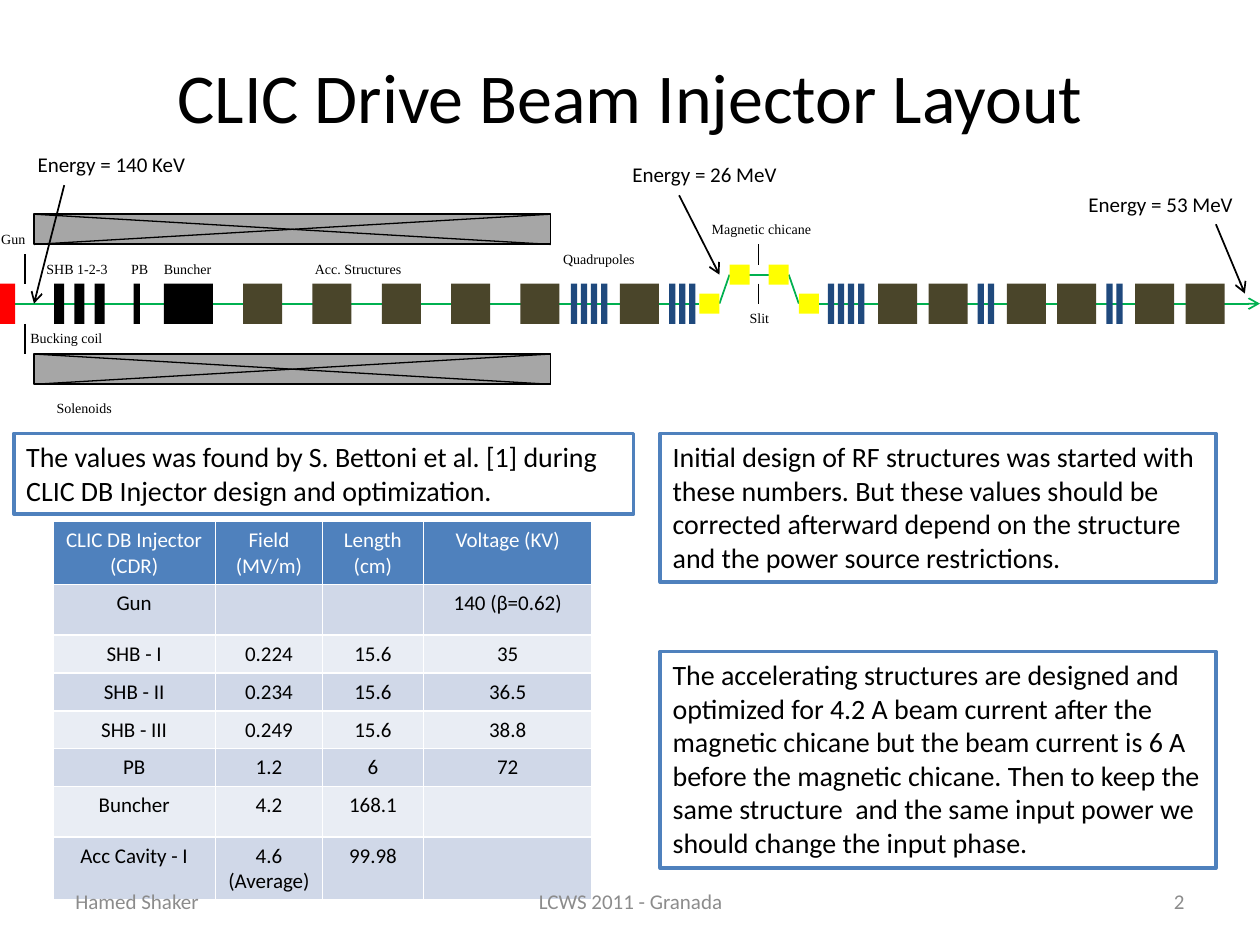
from dataclasses import dataclass
from typing import NamedTuple

from lxml import etree
from pptx import Presentation
from pptx.dml.color import RGBColor
from pptx.enum.shapes import MSO_CONNECTOR, MSO_SHAPE
from pptx.enum.text import MSO_ANCHOR, PP_ALIGN
from pptx.oxml.ns import qn
from pptx.util import Inches, Pt

RECT = MSO_SHAPE.RECTANGLE
STRAIGHT = MSO_CONNECTOR.STRAIGHT
TOP, MIDDLE = MSO_ANCHOR.TOP, MSO_ANCHOR.MIDDLE
LEFT, CENTER, RIGHT = PP_ALIGN.LEFT, PP_ALIGN.CENTER, PP_ALIGN.RIGHT


@dataclass(frozen=True)
class Theme:
    body_font: str = "Calibri"
    label_font: str = "Times New Roman"
    title_size: float = 40
    note_size: float = 16
    small_size: float = 12
    label_size: float = 8
    black: str = "000000"
    white: str = "FFFFFF"
    muted: str = "8C8C8C"
    accent: str = "4F81BD"
    bands: tuple[str, str] = ("D0D8E8", "E9EDF4")
    beam: str = "00B050"
    gun: str = "FF0000"
    solenoid: str = "A6A6A6"
    cavity: str = "4A452A"
    quadrupole: str = "1F497D"
    magnet: str = "FFFF00"


THEME = Theme()


class Box(NamedTuple):
    left: float
    top: float
    width: float
    height: float


class Line(NamedTuple):
    x1: float
    y1: float
    x2: float
    y2: float


class Label(NamedTuple):
    text: str
    box: Box
    indent: float = 0


BEAM_Y = 2.41
CHICANE_Y = 2.18
DEVICE_TOP, DEVICE_HEIGHT = 2.25, 0.32
CAVITY_WIDTH, QUAD_WIDTH, QUAD_PITCH = 0.31, 0.05, 0.08
CELL_PITCH = 1.02  # one accelerating cell after the chicane

BEAM_LINES = [
    Line(5.94, CHICANE_Y, 6.1, CHICANE_Y),
    Line(6.26, CHICANE_Y, 6.34, BEAM_Y),
    Line(5.71, BEAM_Y, 5.79, CHICANE_Y),
    Line(0.12, BEAM_Y, 5.55, BEAM_Y),
]
SOLENOIDS = [Box(0.27, top, 4.1, 0.24) for top in (1.7, 2.81)]
BUNCHERS = [(0.43, 0.08), (0.59, 0.08), (0.75, 0.08), (1.06, 0.05), (1.3, 0.39)]
CAVITIES = [1.93 + 0.55 * i for i in range(5)] + [4.92] + [
    6.97 + CELL_PITCH * cell + offset for cell in range(3) for offset in (0, 0.4)
]
QUAD_GROUPS = [(4.53, 4), (5.31, 3), (6.57, 4), (7.76, 2), (7.76 + CELL_PITCH, 2)]
MAGNETS = [(5.55, 2.33), (5.79, 2.1), (6.1, 2.1), (6.34, 2.33)]
COIL_AND_SLIT = [
    Line(0.2, 2.02, 0.2, 2.25), Line(0.2, 2.57, 0.2, 2.81),
    Line(6.02, 2.25, 6.02, 2.41), Line(6.02, 1.94, 6.02, 2.1),
]
DEVICE_LABELS = [
    Label("Gun", Box(-0.2, 1.78, 0.55, 0.24), 0.11),
    Label("Bucking coil", Box(0, 2.57, 1.01, 0.24), 0.14),
    Label("PB", Box(0.83, 2.02, 0.55, 0.24), 0.11),
    Label("Buncher", Box(1.14, 2.02, 0.71, 0.24), 0.06),
    Label("SHB 1-2-3", Box(0.27, 2.02, 0.71, 0.24)),
    Label("Acc. Structures", Box(2.4, 2.02, 1.02, 0.24)),
    Label("Quadrupoles", Box(4.37, 1.94, 1.02, 0.24)),
    Label("Magnetic chicane", Box(5.55, 1.7, 1.02, 0.24)),
    Label("Slit", Box(5.79, 2.41, 0.47, 0.24), 0.06),
    Label("Solenoids", Box(0.35, 3.12, 1.02, 0.24)),
]
ENERGIES = [
    (Label("Energy = 140 KeV", Box(0.2, 1.15, 2.2, 0.3)), Line(0.51, 1.47, 0.27, 2.41)),
    (Label("Energy = 26 MeV", Box(4.92, 1.23, 1.46, 0.3)), Line(5.39, 1.55, 5.71, 2.18)),
    (Label("Energy = 53 MeV", Box(8.54, 1.47, 1.46, 0.3)), Line(9.65, 1.78, 9.88, 2.33)),
]
NOTES = [
    Label("The values was found by S. Bettoni et al. [1] during CLIC DB Injector "
          "design and optimization.", Box(0.11, 3.44, 4.92, 0.64)),
    Label("The accelerating structures are designed and optimized for 4.2 A beam "
          "current after the magnetic chicane but the beam current is 6 A before the "
          "magnetic chicane. Then to keep the same structure  and the same input power "
          "we should change the input phase.", Box(5.24, 5.17, 4.41, 1.72)),
    Label("Initial design of RF structures was started with these numbers. But these "
          "values should be corrected afterward depend on the structure and the power "
          "source restrictions.", Box(5.24, 3.44, 4.41, 1.18)),
]
FOOTERS = [
    (Label("Hamed Shaker", Box(0.5, 6.95, 2.33, 0.4)), LEFT),
    (Label("LCWS 2011 - Granada", Box(3.42, 6.95, 3.17, 0.4)), CENTER),
    (Label("2", Box(7.17, 6.95, 2.33, 0.4)), RIGHT),
]
TABLE_ROWS = [
    ("CLIC DB Injector (CDR)", "Field (MV/m)", "Length (cm)", "Voltage (KV)"),
    ("Gun", "", "", "140 (β=0.62)"),
    ("SHB - I", "0.224", "15.6", "35"),
    ("SHB - II", "0.234", "15.6", "36.5"),
    ("SHB - III", "0.249", "15.6", "38.8"),
    ("PB", "1.2", "6", "72"),
    ("Buncher", "4.2", "168.1", ""),
    ("Acc Cavity - I", "4.6 (Average)", "99.98", ""),
]
COLUMN_WIDTHS = (1.29, 0.85, 0.8, 1.34)
ROW_HEIGHTS = (0.47, *[0.28] * 6, 0.35)


def write_text(tf, text: str, *, size: float = THEME.small_size,
               font: str = THEME.body_font, color: str = THEME.black, align=LEFT) -> None:
    p = tf.paragraphs[0]
    p.alignment = align
    p.font.size = Pt(size)
    r = p.add_run()
    r.text = text
    r.font.name, r.font.size, r.font.bold = font, Pt(size), False
    r.font.color.rgb = RGBColor.from_string(color)


def add_label(s, label: Label, *, anchor=TOP, **text_format) -> None:
    tf = s.shapes.add_textbox(*map(Inches, label.box)).text_frame
    tf.word_wrap = True
    tf.vertical_anchor = anchor
    tf.margin_left = Inches(0.1 + label.indent)
    write_text(tf, label.text, **text_format)


def add_rect(s, box: Box, fill: str, line: str | None = None, width: float = 1):
    sp = s.shapes.add_shape(RECT, *map(Inches, box))
    sp.shadow.inherit = False
    sp.fill.solid()
    sp.fill.fore_color.rgb = RGBColor.from_string(fill)
    if line:
        sp.line.color.rgb = RGBColor.from_string(line)
        sp.line.width = Pt(width)
    else:
        sp.line.fill.background()
    return sp


def add_line(s, line: Line, color: str = THEME.black, width: float = 1,
             arrow: bool = False) -> None:
    cxn = s.shapes.add_connector(STRAIGHT, *map(Inches, line))
    cxn.line.color.rgb = RGBColor.from_string(color)
    cxn.line.width = Pt(width)
    if arrow:
        etree.SubElement(cxn.line._get_or_add_ln(), qn("a:tailEnd"), type="arrow")
    etree.SubElement(cxn._element.spPr, qn("a:effectLst"))


def add_device(s, left: float, width: float, fill: str) -> None:
    add_rect(s, Box(left, DEVICE_TOP, width, DEVICE_HEIGHT), fill)


def add_solenoid(s, box: Box) -> None:
    add_rect(s, box, THEME.solenoid, THEME.black)
    right, bottom = box.left + box.width, box.top + box.height
    add_line(s, Line(box.left, box.top, right, bottom), width=0.75)
    add_line(s, Line(box.left, bottom, right, box.top), width=0.75)


def add_beamline(s) -> None:
    for line in BEAM_LINES:
        add_line(s, line, THEME.beam)
    add_line(s, Line(6.5, BEAM_Y, 10, BEAM_Y), THEME.beam, arrow=True)
    add_device(s, 0, 0.12, THEME.gun)
    for box in SOLENOIDS:
        add_solenoid(s, box)
    for left, width in BUNCHERS:
        add_device(s, left, width, THEME.black)
    for left in CAVITIES:
        add_device(s, left, CAVITY_WIDTH, THEME.cavity)
    for left, count in QUAD_GROUPS:
        for i in range(count):
            add_device(s, left + QUAD_PITCH * i, QUAD_WIDTH, THEME.quadrupole)
    for left, top in MAGNETS:
        add_rect(s, Box(left, top, 0.16, 0.16), THEME.magnet)
    for line in COIL_AND_SLIT:
        add_line(s, line)
    for label in DEVICE_LABELS:
        add_label(s, label, size=THEME.label_size, font=THEME.label_font)
    for label, arrow in ENERGIES:
        add_label(s, label)
        add_line(s, arrow, arrow=True)


def add_parameter_table(s) -> None:
    box = Box(0.42, 4.14, sum(COLUMN_WIDTHS), sum(ROW_HEIGHTS))
    table = s.shapes.add_table(len(TABLE_ROWS), len(COLUMN_WIDTHS), *map(Inches, box)).table
    for column, width in zip(table.columns, COLUMN_WIDTHS):
        column.width = Inches(width)
    for i, (row, height, texts) in enumerate(zip(table.rows, ROW_HEIGHTS, TABLE_ROWS)):
        row.height = Inches(height)
        fill = THEME.bands[(i - 1) % 2] if i else THEME.accent
        color = THEME.black if i else THEME.white
        for cell, text in zip(row.cells, texts):
            cell.fill.solid()
            cell.fill.fore_color.rgb = RGBColor.from_string(fill)
            write_text(cell.text_frame, text, color=color, align=CENTER)


def add_note(s, note: Label) -> None:
    sp = add_rect(s, note.box, THEME.white, THEME.accent, 2)
    tf = sp.text_frame
    tf.word_wrap = True
    tf.vertical_anchor = TOP
    write_text(tf, note.text, size=THEME.note_size)


def main() -> None:
    prs = Presentation()
    prs.slide_width, prs.slide_height = Inches(10), Inches(7.5)
    s = prs.slides.add_slide(prs.slide_layouts[6])
    add_label(s, Label("CLIC Drive Beam Injector Layout", Box(0.5, 0.13, 9, 1.25)),
              anchor=MIDDLE, size=THEME.title_size, align=CENTER)
    add_beamline(s)
    add_parameter_table(s)
    for note in NOTES:
        add_note(s, note)
    for label, align in FOOTERS:
        add_label(s, label, anchor=MIDDLE, color=THEME.muted, align=align)
    prs.save("out.pptx")


if __name__ == "__main__":
    main()
